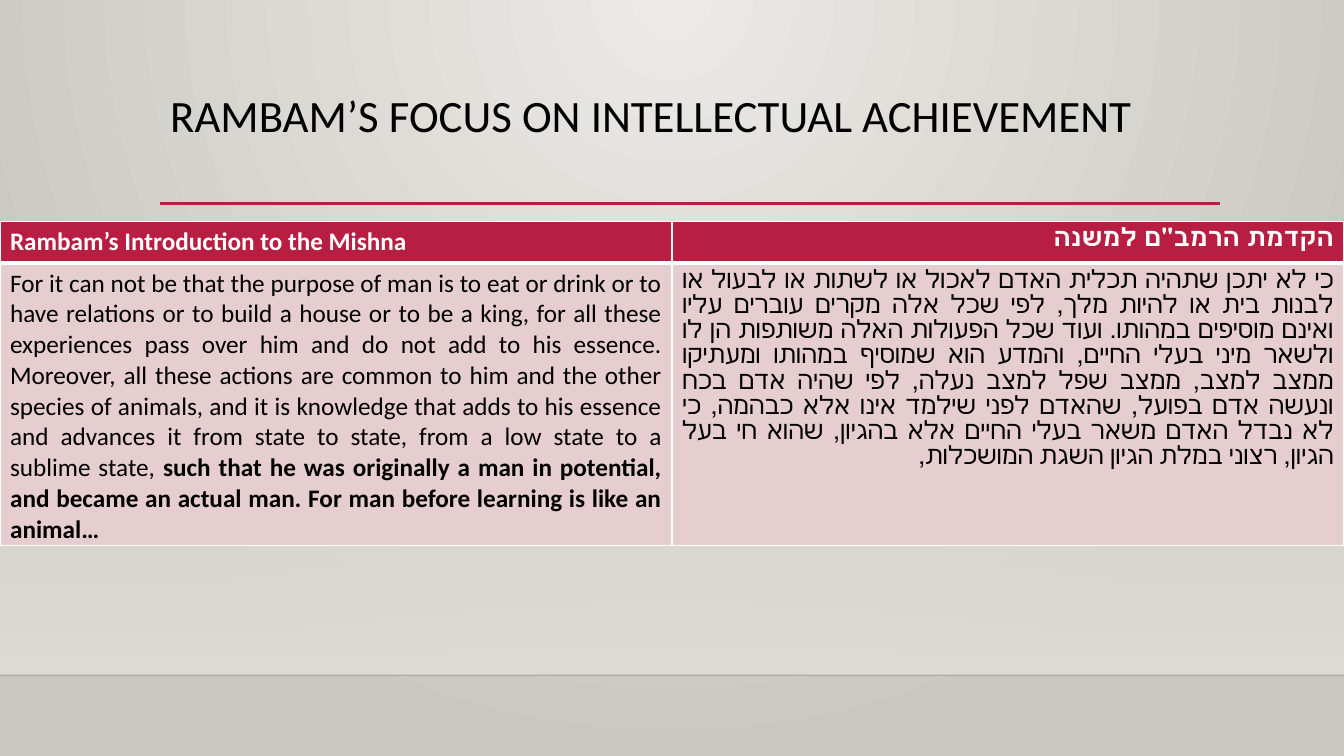
from lxml import etree
from pptx import Presentation
from pptx.dml.color import RGBColor
from pptx.enum.shapes import MSO_CONNECTOR, MSO_SHAPE
from pptx.enum.text import MSO_ANCHOR, PP_ALIGN
from pptx.oxml import parse_xml
from pptx.oxml.ns import nsdecls, qn
from pptx.util import Inches, Pt

LINE = MSO_CONNECTOR.STRAIGHT
RECT = MSO_SHAPE.RECTANGLE
TOP = MSO_ANCHOR.TOP
LEFT, JUST = PP_ALIGN.LEFT, PP_ALIGN.JUSTIFY
WIDE, HIGH = 13.33, 7.5
RED, PINK, WHITE, BLACK = "B71E42", "E6CDCF", "FFFFFF", "000000"
FONT = {"name": "Calibri", "size": Pt(18)}

TITLE = "RAMBAM’S FOCUS ON INTELLECTUAL ACHIEVEMENT"
HEAD_EN = "Rambam’s Introduction to the Mishna"
HEAD_HE = 'הקדמת הרמב"ם למשנה'
BODY_EN = (
    "For it can not be that the purpose of man is to eat or drink or to have "
    "relations or to build a house or to be a king, for all these experiences "
    "pass over him and do not add to his essence. Moreover, all these actions "
    "are common to him and the other species of animals, and it is knowledge "
    "that adds to his essence and advances it from state to state, from a low "
    "state to a sublime state, "
)
BOLD_EN = (
    "such that he was originally a man in potential, and became an actual man. "
    "For man before learning is like an animal…"
)
BODY_HE = (
    "כי לא יתכן שתהיה תכלית האדם לאכול או לשתות או לבעול או לבנות בית או להיות מלך, "
    "לפי שכל אלה מקרים עוברים עליו ואינם מוסיפים במהותו. "
    "ועוד שכל הפעולות האלה משותפות הן לו ולשאר מיני בעלי החיים, "
    "והמדע הוא שמוסיף במהותו ומעתיקו ממצב למצב, ממצב שפל למצב נעלה, "
    "לפי שהיה אדם בכח ונעשה אדם בפועל, שהאדם לפני שילמד אינו אלא כבהמה, "
    "כי לא נבדל האדם משאר בעלי החיים אלא בהגיון, שהוא חי בעל הגיון, "
    "רצוני במלת הגיון השגת המושכלות,"
)
ROWS = [
    [(LEFT, False, [(HEAD_EN, True)]), (JUST, True, [(HEAD_HE, True)])],
    [(JUST, False, [(BODY_EN, False), (BOLD_EN, True)]),
     (JUST, True, [(BODY_HE, False)])],
]


def color(code):
    return RGBColor.from_string(code)


def style(item, values):
    for name, value in values.items():
        setattr(item, name, value)


def blend(stops, shade):
    parts = "".join(
        f'<a:gs pos="{pos * 1000}"><a:srgbClr val="{code}">'
        f'<a:alpha val="{alpha * 1000}"/></a:srgbClr></a:gs>'
        for pos, code, alpha in stops
    )
    return parse_xml(
        f'<a:gradFill {nsdecls("a")} rotWithShape="1">'
        f"<a:gsLst>{parts}</a:gsLst>{shade}</a:gradFill>"
    )


def swap(fill, parent, new):
    fill.solid()
    old = parent.find(qn("a:solidFill"))
    parent.replace(old, new)


def backdrop(slide):
    fill = slide.background.fill
    fill.solid()
    holder = next(slide.element.iter(qn("p:bgPr")))
    shade = ('<a:path path="circle"><a:fillToRect l="43000" t="0" '
             'r="43000" b="100000"/></a:path>')
    swap(fill, holder, blend([(0, "ECEAE7", 100), (100, "CAC7C1", 100)], shade))


def rule(slide, left, top, width, code, weight, alpha=100):
    line = slide.shapes.add_connector(
        LINE, Inches(left), Inches(top), Inches(left + width), Inches(top))
    line.line.color.rgb = color(code)
    line.line.width = Pt(weight)
    tint = next(line.element.spPr.iter(qn("a:srgbClr")))
    etree.SubElement(tint, qn("a:alpha"), val=str(alpha * 1000))
    etree.SubElement(line.element.spPr, qn("a:effectLst"))


def wall(slide, left, top, width, height):
    shape = slide.shapes.add_shape(
        RECT, Inches(left), Inches(top), Inches(width), Inches(height))
    shape.shadow.inherit = False
    shape.line.fill.background()
    stops = [(0, "DFDBD5", 0), (100, "DFDBD5", 100)]
    swap(shape.fill, shape.element.spPr,
         blend(stops, '<a:lin ang="5400000" scaled="0"/>'))
    rule(slide, left, top + height, width, "000001", 1, 20)


def title(slide, left, top, width, height):
    box = slide.shapes.add_textbox(
        Inches(left), Inches(top), Inches(width), Inches(height))
    style(box.text_frame, {"word_wrap": True, "vertical_anchor": TOP})
    par = box.text_frame.paragraphs[0]
    par.line_spacing = 0.9
    run = par.add_run()
    run.text = TITLE
    style(run.font, FONT | {"size": Pt(32)})
    run.font.color.rgb = color(BLACK)
    rule(slide, left, top + height - 0.01, width + 0.01, RED, 2.5)


def border(cell, widths):
    props = cell._tc.get_or_add_tcPr()
    for spot, (side, weight) in enumerate(widths.items()):
        props.insert(spot, parse_xml(
            f'<a:ln{side} {nsdecls("a")} w="{Pt(weight)}"><a:solidFill>'
            f'<a:srgbClr val="{WHITE}"/></a:solidFill></a:ln{side}>'))


def write(cell, entry, ink):
    align, rtl, runs = entry
    par = cell.text_frame.paragraphs[0]
    par.alignment = align
    if rtl:
        par._p.get_or_add_pPr().set("rtl", "1")
    for text, bold in runs:
        run = par.add_run()
        run.text = text
        style(run.font, FONT | {"bold": bold})
        run.font.color.rgb = color(ink)
        if rtl:
            run._r.get_or_add_rPr().set("lang", "he-IL")


def texts(slide, left, top, width, height):
    table = slide.shapes.add_table(
        2, 2, Inches(left), Inches(top), Inches(width), Inches(height)).table
    looks = [(0.41, RED, WHITE, {"L": 1, "R": 1, "T": 1, "B": 3}),
             (height - 0.41, PINK, BLACK, {"L": 1, "R": 1, "T": 3, "B": 1})]
    for row, entries, (tall, back, ink, widths) in zip(table.rows, ROWS, looks):
        row.height = Inches(tall)
        for cell, entry in zip(row.cells, entries):
            cell.fill.solid()
            cell.fill.fore_color.rgb = color(back)
            border(cell, widths)
            write(cell, entry, ink)


def main():
    deck = Presentation()
    style(deck, {"slide_width": Inches(WIDE), "slide_height": Inches(HIGH)})
    slide = deck.slides.add_slide(deck.slide_layouts[6])
    backdrop(slide)
    wall(slide, 0, 2.21, WIDE, 4.49)
    title(slide, 1.59, 0.88, 10.5, 1.15)
    texts(slide, 0, 2.2, WIDE, 3.21)
    deck.save("out.pptx")


if __name__ == "__main__":
    main()
